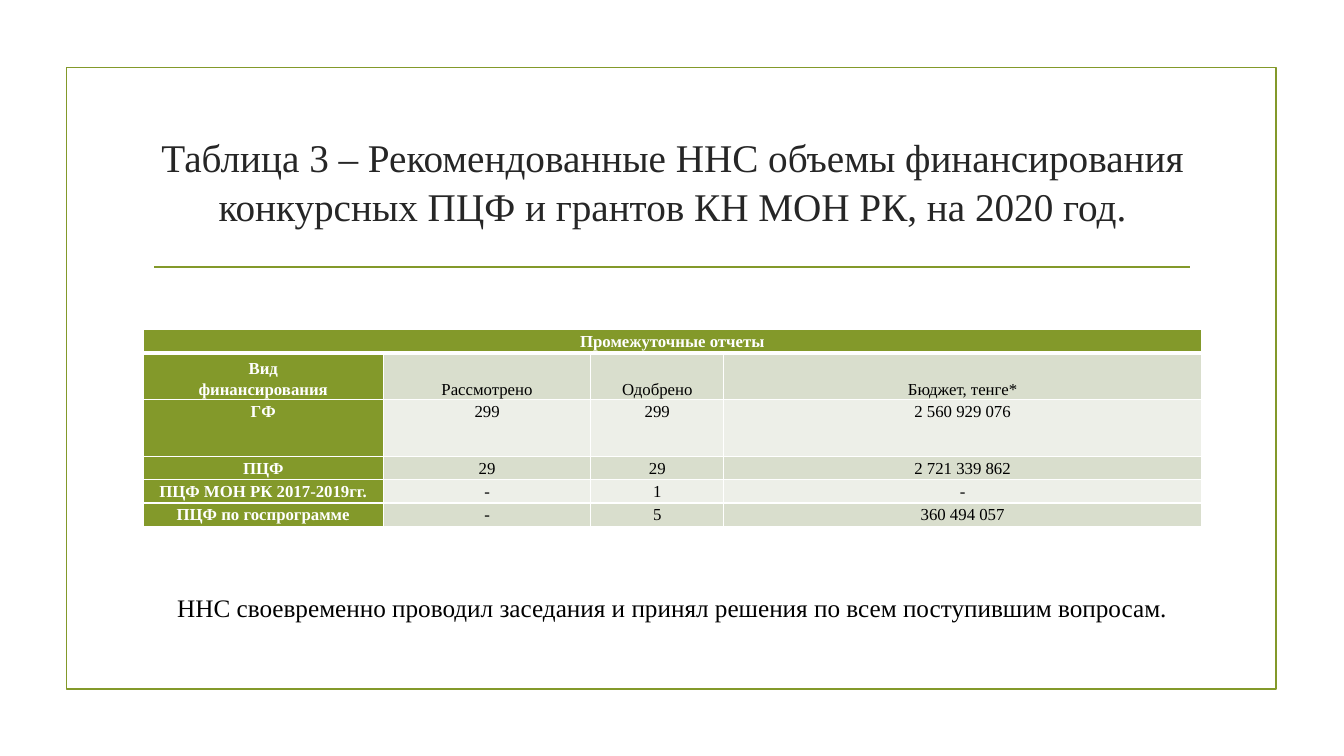
from lxml.etree import SubElement
from pptx import Presentation
from pptx.dml.color import RGBColor as RGB
from pptx.enum.shapes import MSO_CONNECTOR, MSO_SHAPE
from pptx.enum.text import MSO_ANCHOR as Anchor, PP_ALIGN as Align
from pptx.oxml.ns import qn
from pptx.util import Cm, Pt

# Content
TITLE = ("Таблица 3 – Рекомендованные ННС объемы финансирования "
         "конкурсных ПЦФ и грантов КН МОН РК, на 2020 год.")
TABLE_HEADING = "Промежуточные отчеты"
REPORTS = [
    ("Вид\nфинансирования", "Рассмотрено", "Одобрено", "Бюджет, тенге*"),
    ("ГФ", "299", "299", "2 560 929 076"),
    ("ПЦФ", "29", "29", "2 721 339 862"),
    ("ПЦФ МОН РК 2017-2019гг.", "-", "1", "-"),
    ("ПЦФ по госпрограмме", "-", "5", "360 494 057"),
]
CONCLUSION = ("ННС своевременно проводил заседания и принял решения "
              "по всем поступившим вопросам.")

# Theme
THEME = {
    "font": "Times New Roman",
    "green": RGB.from_string("83992A"),
    "bands": [RGB.from_string("D9DECD"), RGB.from_string("EDEFE8")],
    "title": {"size": Pt(28), "color": RGB.from_string("262626")},
    "heading": {"size": Pt(12), "color": RGB.from_string("FFFFFF"), "bold": True},
    "value": {"size": Pt(12), "color": RGB.from_string("000000"), "bold": False},
    "conclusion": {"size": Pt(18), "color": RGB.from_string("000000")},
    "rule": Pt(1.25),
    "border": 1,
    "heading_border": 3,
}

# Layout
LEFT, WIDTH = Cm(3.61), Cm(26.67)
COLUMN_WIDTHS = [6.05, 5.23, 3.35, 12.04]
ROW_HEIGHTS = [0.54, 1.08, 1.44, 0.54, 0.54, 0.54]
CELL_FORMAT = {"margin_left": Cm(0.18), "margin_right": Cm(0.18),
               "margin_top": 0, "margin_bottom": 0}


def write(frame, text, style, spacing=1.0):
    frame.text = text
    for paragraph in frame.paragraphs:
        paragraph.alignment = Align.CENTER
        paragraph.line_spacing = spacing
        paragraph.font.name = THEME["font"]
        for name, value in THEME[style].items():
            if name == "color":
                paragraph.font.color.rgb = value
            else:
                setattr(paragraph.font, name, value)


def add_text(top, height, text, style, anchor, spacing=1.0):
    frame = slide.shapes.add_textbox(LEFT, top, WIDTH, height).text_frame
    frame.word_wrap = True
    frame.vertical_anchor = anchor
    write(frame, text, style, spacing)


def add_borders(cell, **widths):
    properties = cell._tc.get_or_add_tcPr()
    for side in "LRTB":
        points = widths.get(side, THEME["border"])
        border = SubElement(properties, qn(f"a:ln{side}"), w=str(Pt(points)))
        fill = SubElement(border, qn("a:solidFill"))
        SubElement(fill, qn("a:srgbClr"), val=str(THEME["heading"]["color"]))


presentation = Presentation()
presentation.slide_width, presentation.slide_height = Cm(33.87), Cm(19.05)
slide = presentation.slides.add_slide(presentation.slide_layouts[6])

# Frame and rule under the title
frame_box = slide.shapes.add_shape(MSO_SHAPE.RECTANGLE, Cm(1.68), Cm(1.7), Cm(30.48), Cm(15.67))
frame_box.shadow.inherit = False
frame_box.fill.background()
title_rule = slide.shapes.add_connector(
    MSO_CONNECTOR.STRAIGHT, Cm(3.89), Cm(6.73), Cm(30), Cm(6.73))
SubElement(title_rule._element.spPr, qn("a:effectLst"))
for outlined in (frame_box, title_rule):
    outlined.line.color.rgb = THEME["green"]
    outlined.line.width = THEME["rule"]

# Title
add_text(Cm(2.72), Cm(3.63), TITLE, "title", Anchor.MIDDLE, 1.04)

# Table of reports
rows = [(TABLE_HEADING, "", "", "")] + REPORTS
reports = slide.shapes.add_table(
    len(rows), len(COLUMN_WIDTHS), LEFT, Cm(8.31), WIDTH, Cm(sum(ROW_HEIGHTS))).table
reports.first_row = reports.horz_banding = False
for column, width in zip(reports.columns, COLUMN_WIDTHS):
    column.width = Cm(width)
for row, height in zip(reports.rows, ROW_HEIGHTS):
    row.height = Cm(height)

for r, texts in enumerate(rows):
    for c, text in enumerate(texts):
        cell = reports.cell(r, c)
        is_heading = r == 0 or c == 0
        for name, value in CELL_FORMAT.items():
            setattr(cell, name, value)
        cell.vertical_anchor = Anchor.BOTTOM if r == 1 else Anchor.TOP
        edges = {0: {"B": THEME["heading_border"]}, 1: {"T": THEME["heading_border"]}}
        add_borders(cell, **edges.get(r, {}))
        cell.fill.solid()
        cell.fill.fore_color.rgb = THEME["green"] if is_heading else THEME["bands"][(r - 1) % 2]
        write(cell.text_frame, text, "heading" if is_heading else "value", 1.15)
reports.cell(0, 0).merge(reports.cell(0, len(COLUMN_WIDTHS) - 1))

# Conclusion
add_text(Cm(14.81), Cm(1.02), CONCLUSION, "conclusion", Anchor.TOP)

presentation.save("out.pptx")
